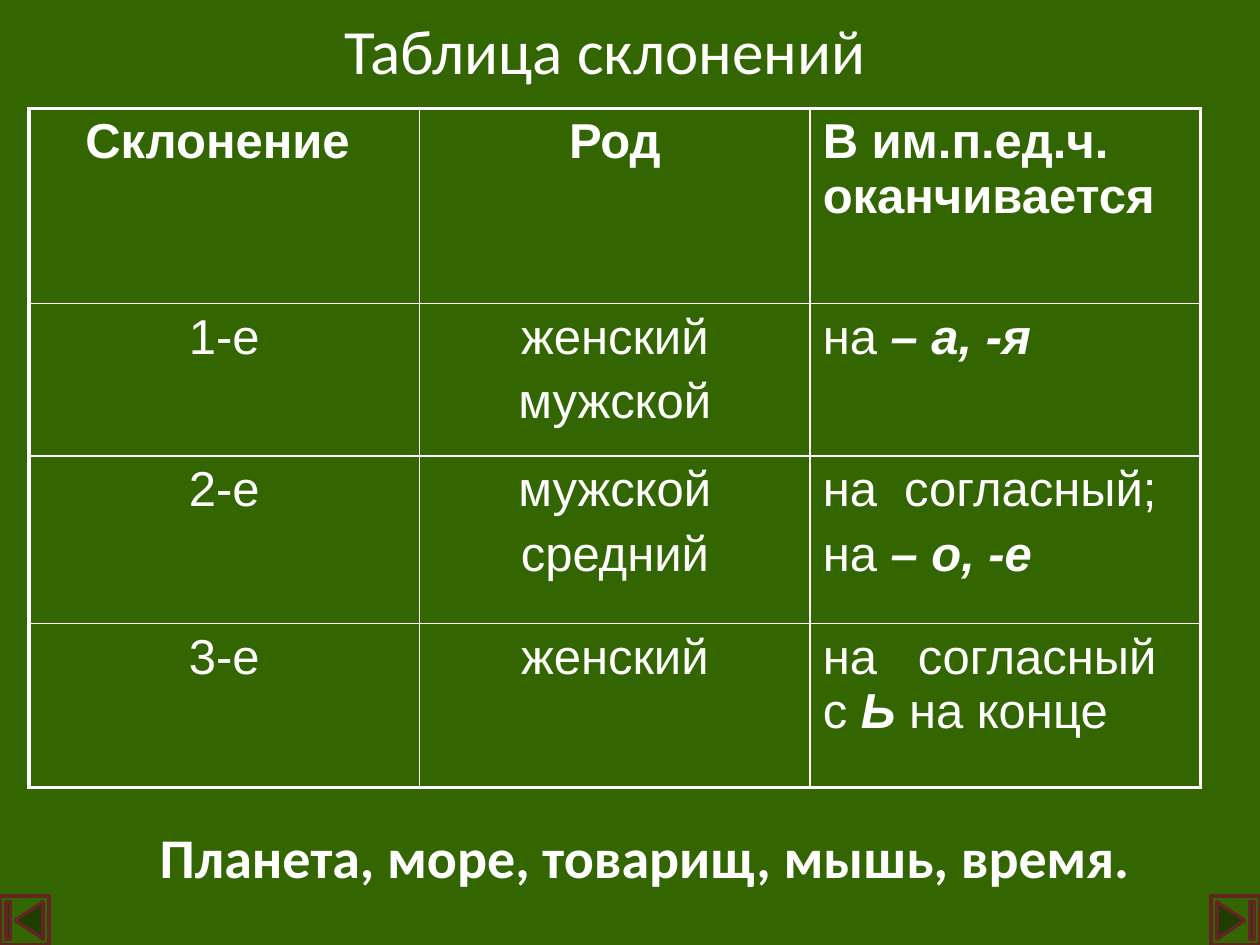
"""Builds the slide with the table of Russian noun declensions."""
from lxml import etree
from pptx import Presentation, util as u
from pptx.dml.color import RGBColor
from pptx.enum import shapes, text
from pptx.oxml import ns

GREEN, WHITE, MAROON = "336600", "FFFFFF", "632523"
CENTER, LEFT = text.PP_ALIGN.CENTER, text.PP_ALIGN.LEFT


def rgb(value):
    return RGBColor.from_string(value)


class Deck:
    def __init__(self):
        self.prs = Presentation()
        self.prs.slide_width, self.prs.slide_height = u.Inches(10), u.Inches(7.5)
        self.s = self.prs.slides.add_slide(self.prs.slide_layouts[0])
        fill = self.s.background.fill
        fill.solid()
        fill.fore_color.rgb = rgb(GREEN)

    def add_runs(self, p, runs, size, font, align):
        p.alignment = align
        for words, bold, italic in runs:
            r = p.add_run()
            r.text = words
            r.font.size, r.font.name = u.Pt(size), font
            r.font.bold, r.font.italic = bold, italic
            r.font.color.rgb = rgb(WHITE)

    def placeholder(self, idx, box, words, size, bold, anchor):
        sp = self.s.placeholders[idx]
        sp.left, sp.top, sp.width, sp.height = map(u.Inches, box)
        tf = sp.text_frame
        tf.vertical_anchor = anchor
        p = tf.paragraphs[0]
        p.space_before = u.Pt(0)
        self.add_runs(p, [(words, bold, False)], size, "Calibri", CENTER)

    def button(self, left, top, side, rotation):
        sp = self.s.shapes.add_shape(
            shapes.MSO_SHAPE.ACTION_BUTTON_BEGINNING,
            u.Inches(left), u.Inches(top), u.Inches(side), u.Inches(side))
        sp.rotation = rotation
        sp.shadow.inherit = False
        sp.fill.solid()
        sp.fill.fore_color.rgb = rgb(GREEN)
        sp.line.color.rgb = rgb(MAROON)
        sp.line.width = u.Pt(2)

    def borders(self, cell, widths):
        tcPr = cell._tc.get_or_add_tcPr()
        for i, (side, width) in enumerate(widths.items()):
            ln = etree.Element(ns.qn(f"a:ln{side}"), w=str(u.Pt(width)))
            fill = etree.SubElement(ln, ns.qn("a:solidFill"))
            etree.SubElement(fill, ns.qn("a:srgbClr"), val=WHITE)
            tcPr.insert(i, ln)

    def table(self, left, top, col_width, heights, rows):
        n_rows, n_cols = len(rows), len(rows[0])
        tbl = self.s.shapes.add_table(
            n_rows, n_cols, u.Inches(left), u.Inches(top),
            u.Inches(col_width * n_cols), u.Inches(sum(heights))).table
        tbl.first_row = tbl.horz_banding = False
        for col in tbl.columns:
            col.width = u.Inches(col_width)
        for i, (height, row) in enumerate(zip(heights, rows)):
            tbl.rows[i].height = u.Inches(height)
            for j, paragraphs in enumerate(row):
                cell = tbl.cell(i, j)
                cell.fill.solid()
                cell.fill.fore_color.rgb = rgb(GREEN)
                outer = {"L": j == 0, "R": j == n_cols - 1,
                         "T": i == 0, "B": i == n_rows - 1}
                self.borders(cell, {k: 2.25 if v else 1 for k, v in outer.items()})
                tf = cell.text_frame
                for k, runs in enumerate(paragraphs):
                    p = tf.add_paragraph() if k else tf.paragraphs[0]
                    if k:
                        p.space_before = u.Pt(5.6)
                    self.add_runs(p, runs, 28, "Arial", LEFT if outer["R"] else CENTER)


def head(words):
    return [[(words, True, False)]]


def plain(*lines):
    return [[(line, False, False)] for line in lines]


def ending(before, mark, after=""):
    runs = [(before, False, False), (mark, True, True)]
    return runs + [(after, False, False)] if after else runs


def main():
    deck = Deck()
    deck.placeholder(0, (0.55, 0, 8.5, 0.78), "Таблица склонений", 36, False,
                     text.MSO_ANCHOR.MIDDLE)
    deck.placeholder(1, (1.02, 6.48, 8.2, 0.59), "Планета, море, товарищ, мышь, время.",
                     32, True, text.MSO_ANCHOR.TOP)
    deck.button(0, 7.11, 0.39, 0)
    deck.button(9.61, 7.11, 0.39, 180)
    deck.table(0.23, 0.86, 3.1, (1.55, 1.21, 1.33, 1.3), [
        [head("Склонение "), head("Род"), head("В им.п.ед.ч. оканчивается")],
        [plain("1-е"), plain("женский", "мужской"), [ending("на ", "– а, -я")]],
        [plain("2-е"), plain("мужской", "средний"),
         plain("на  согласный;") + [ending("на ", "– о, -е")]],
        [plain("3-е"), plain("женский"),
         [ending("на   согласный с ", "Ь", " на конце")]],
    ])
    deck.prs.save("out.pptx")


if __name__ == "__main__":
    main()
